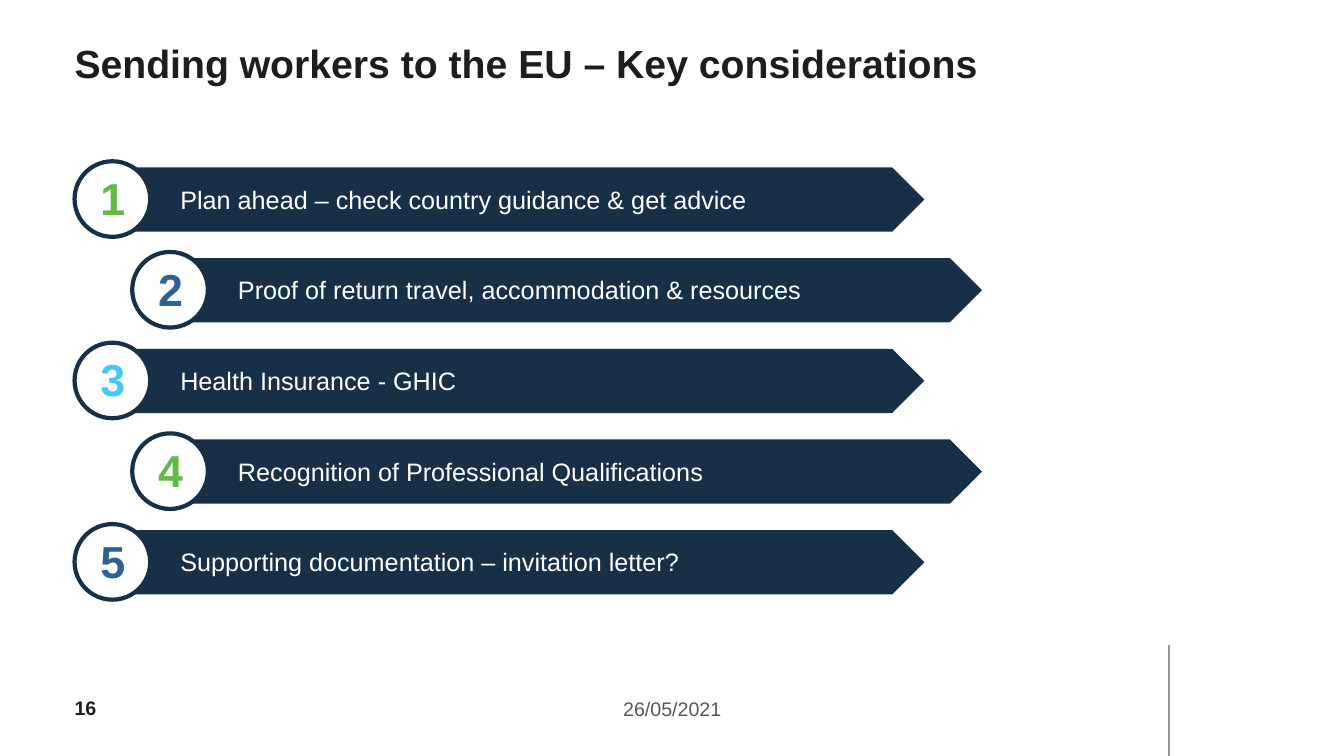
from lxml.etree import SubElement
from pptx import Presentation
from pptx.dml.color import RGBColor as Rgb
from pptx.enum.shapes import MSO_CONNECTOR as Connector, MSO_SHAPE as Shape
from pptx.enum.text import MSO_ANCHOR as Anchor, PP_ALIGN as Align
from pptx.oxml.ns import qn
from pptx.util import Inches, Pt

COLOURS = {
    "ink": "1D1D1B", "grey": "585852", "rule": "999999", "navy": "173048",
    "white": "FFFFFF", "green": "61BB46", "blue": "316091", "sky": "44C8F5",
}
CONSIDERATIONS = [
    ("Plan ahead – check country guidance & get advice", "green"),
    ("Proof of return travel, accommodation & resources", "blue"),
    ("Health Insurance - GHIC", "sky"),
    ("Recognition of Professional Qualifications", "green"),
    ("Supporting documentation – invitation letter?", "blue"),
]
MARGIN = 5.55
FIRST_ROW, ROW_PITCH = 21.33, 12
STAGGER = 4.29


def colour(name):
    return Rgb.from_string(COLOURS[name])


def write(frame, text, size=18, ink="ink", bold=False, align=Align.LEFT,
          anchor=Anchor.TOP, inset=True):
    frame.word_wrap = True
    frame.vertical_anchor = anchor
    if not inset:
        frame.margin_left = frame.margin_right = 0
        frame.margin_top = frame.margin_bottom = 0
    line = frame.paragraphs[0]
    line.alignment = align
    run = line.add_run()
    run.text = text
    run.font.name = "Arial"
    run.font.size = Pt(size)
    run.font.bold = bold
    run.font.color.rgb = colour(ink)


class GridSlide:
    """Draws styled elements on a slide divided into 100 columns and 100 rows."""

    def __init__(self, deck):
        self.column = deck.slide_width / 100
        self.row = deck.slide_height / 100
        self.shapes = deck.slides.add_slide(deck.slide_layouts[6]).shapes

    def place(self, left, top, width, height):
        return (round(left * self.column), round(top * self.row),
                round(width * self.column), round(height * self.row))

    def text(self, box, words, **style):
        write(self.shapes.add_textbox(*self.place(*box)).text_frame, words, **style)

    def shape(self, kind, box, fill, outline=None):
        drawn = self.shapes.add_shape(kind, *self.place(*box))
        drawn.shadow.inherit = False
        drawn.fill.solid()
        drawn.fill.fore_color.rgb = colour(fill)
        if outline:
            drawn.line.color.rgb = colour(outline)
            drawn.line.width = Pt(3)
        else:
            drawn.line.fill.background()

    def line(self, start, end, ink, width):
        rule = self.shapes.add_connector(
            Connector.STRAIGHT, *self.place(*start, *end))
        rule.line.color.rgb = colour(ink)
        rule.line.width = Pt(width)
        SubElement(rule._element.spPr, qn("a:effectLst"))

    def consideration(self, index, words, accent):
        left = MARGIN + index % 2 * STAGGER
        top = FIRST_ROW + index * ROW_PITCH
        self.shape(Shape.PENTAGON, (left + 2.85, top + 0.8, 60.38, 8.5), "navy")
        self.text((left + 7.13, top + 2.33, 52, 5.33), words, ink="white")
        self.shape(Shape.OVAL, (left, top, 5.63, 10), "white", outline="navy")
        self.text((left + 0.45, top + 0.53, 4.8, 8.53), str(index + 1), size=32,
                  ink=accent, bold=True, align=Align.CENTER, anchor=Anchor.MIDDLE)


def main():
    deck = Presentation()
    deck.slide_width, deck.slide_height = Inches(13.33), Inches(7.5)
    slide = GridSlide(deck)
    slide.text((33.15, 91.47, 33.75, 4.53), "26/05/2021", size=14, ink="grey",
               align=Align.CENTER)
    slide.line((87, 85.33), (87, 100), "rule", 1.25)
    slide.text((MARGIN, 90.93, 5.55, 5.33), "16", size=14, bold=True,
               anchor=Anchor.MIDDLE, inset=False)
    slide.text((MARGIN, 5.2, 79.95, 13.07),
               "Sending workers to the EU – Key considerations",
               size=28, bold=True, inset=False)
    for index, (words, accent) in enumerate(CONSIDERATIONS):
        slide.consideration(index, words, accent)
    deck.save("out.pptx")


if __name__ == "__main__":
    main()
